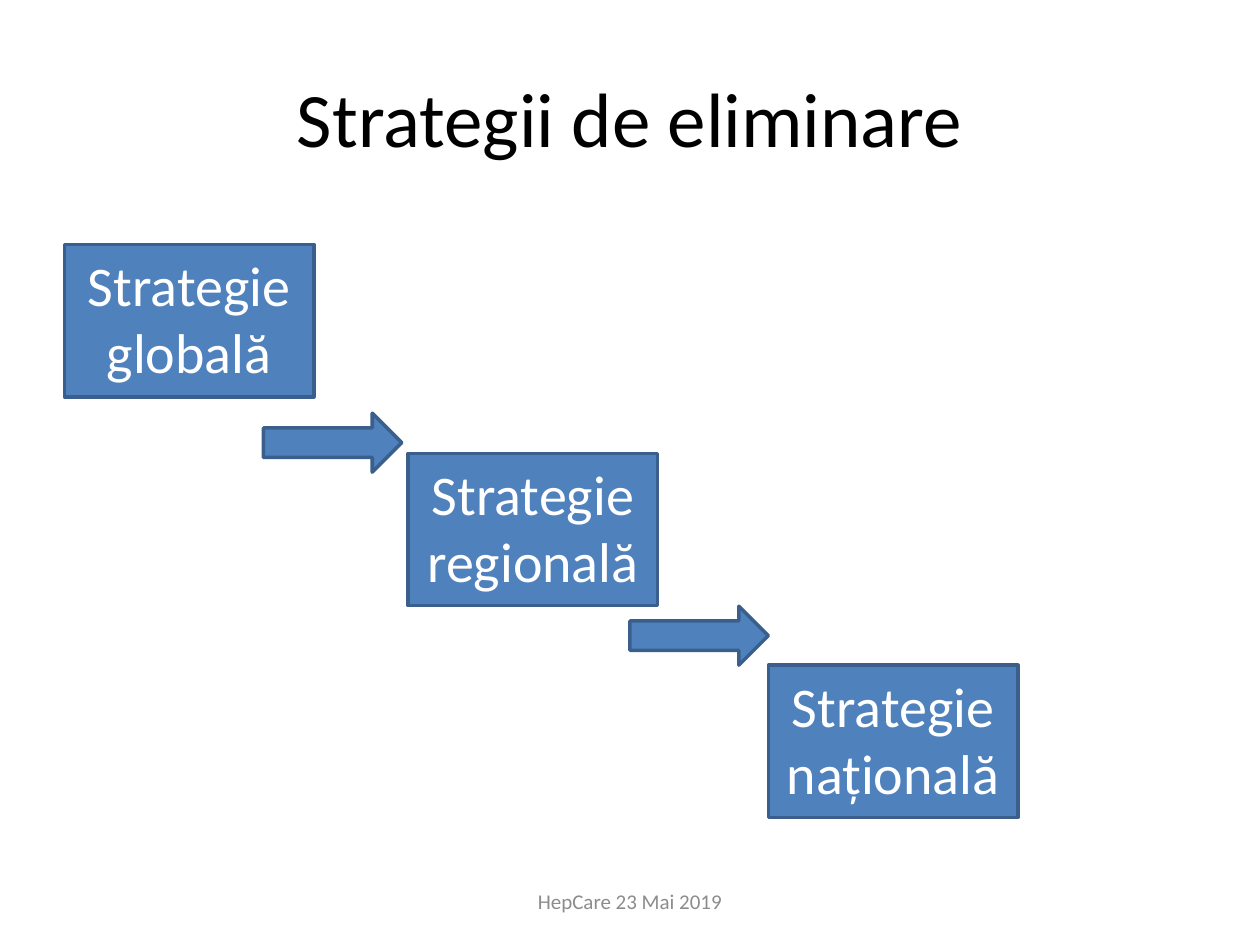
from dataclasses import dataclass

from pptx import Presentation
from pptx.dml.color import RGBColor
from pptx.enum import shapes, text
from pptx.util import Cm, Pt

COLORS = {
    "title": "000000",
    "fill": "4F81BD",
    "line": "3A5F8C",
    "label": "FFFFFF",
    "footer": "8C8C8C",
}
FONT = "Calibri"
BOX_SIZE = (5.03, 3.07)
ARROW_SIZE = (2.79, 1.19)


@dataclass
class Strategy:
    label: str
    left: float
    top: float


@dataclass
class Arrow:
    left: float
    top: float


STRATEGIES = [
    Strategy("Strategie globală", 1.3, 4.93),
    Strategy("Strategie regională", 8.23, 9.14),
    Strategy("Strategie națională", 15.49, 13.41),
]
ARROWS = [Arrow(5.31, 8.33), Arrow(12.7, 12.22)]


def color(name: str) -> RGBColor:
    return RGBColor.from_string(COLORS[name])


def write(shape, words: str, size: float, color_name: str, anchor) -> None:
    """Fill a shape with one centred, wrapped paragraph."""
    frame = shape.text_frame
    frame_format = {"word_wrap": True, "vertical_anchor": anchor,
                    "auto_size": text.MSO_AUTO_SIZE.NONE}
    for name, value in frame_format.items():
        setattr(frame, name, value)
    paragraph = frame.paragraphs[0]
    paragraph.text = words
    paragraph.alignment = text.PP_ALIGN.CENTER
    for name, value in {"name": FONT, "size": Pt(size)}.items():
        setattr(paragraph.font, name, value)
    paragraph.font.color.rgb = color(color_name)


def add_block(slide, kind, left: float, top: float, size: tuple[float, float]):
    """Add a filled and outlined preset shape."""
    shape = slide.shapes.add_shape(kind, *map(Cm, (left, top, *size)))
    shape.shadow.inherit = False
    shape.fill.solid()
    shape.fill.fore_color.rgb = color("fill")
    shape.line.color.rgb = color("line")
    shape.line.width = Pt(2)
    return shape


def add_strategy(slide, strategy: Strategy) -> None:
    box = add_block(slide, shapes.MSO_SHAPE.RECTANGLE,
                    strategy.left, strategy.top, BOX_SIZE)
    write(box, strategy.label, 32, "label", text.MSO_ANCHOR.TOP)


def add_arrow(slide, arrow: Arrow) -> None:
    add_block(slide, shapes.MSO_SHAPE.RIGHT_ARROW, arrow.left, arrow.top, ARROW_SIZE)


def main() -> None:
    presentation = Presentation()
    presentation.slide_width, presentation.slide_height = Cm(25.4), Cm(19.05)
    slide = presentation.slides.add_slide(presentation.slide_layouts[5])

    # Title
    title = slide.shapes.title
    place = {"left": 1.27, "top": 0.76, "width": 22.86, "height": 3.18}
    for name, value in place.items():
        setattr(title, name, Cm(value))
    write(title, "Strategii de eliminare", 44, "title", text.MSO_ANCHOR.MIDDLE)

    # Staircase of strategies
    for strategy in STRATEGIES:
        add_strategy(slide, strategy)
    for arrow in ARROWS:
        add_arrow(slide, arrow)

    # Footer
    footer = slide.shapes.add_textbox(Cm(8.68), Cm(17.66), Cm(8.04), Cm(1.01))
    write(footer, "HepCare 23 Mai 2019", 12, "footer", text.MSO_ANCHOR.MIDDLE)

    presentation.save("out.pptx")


if __name__ == "__main__":
    main()
